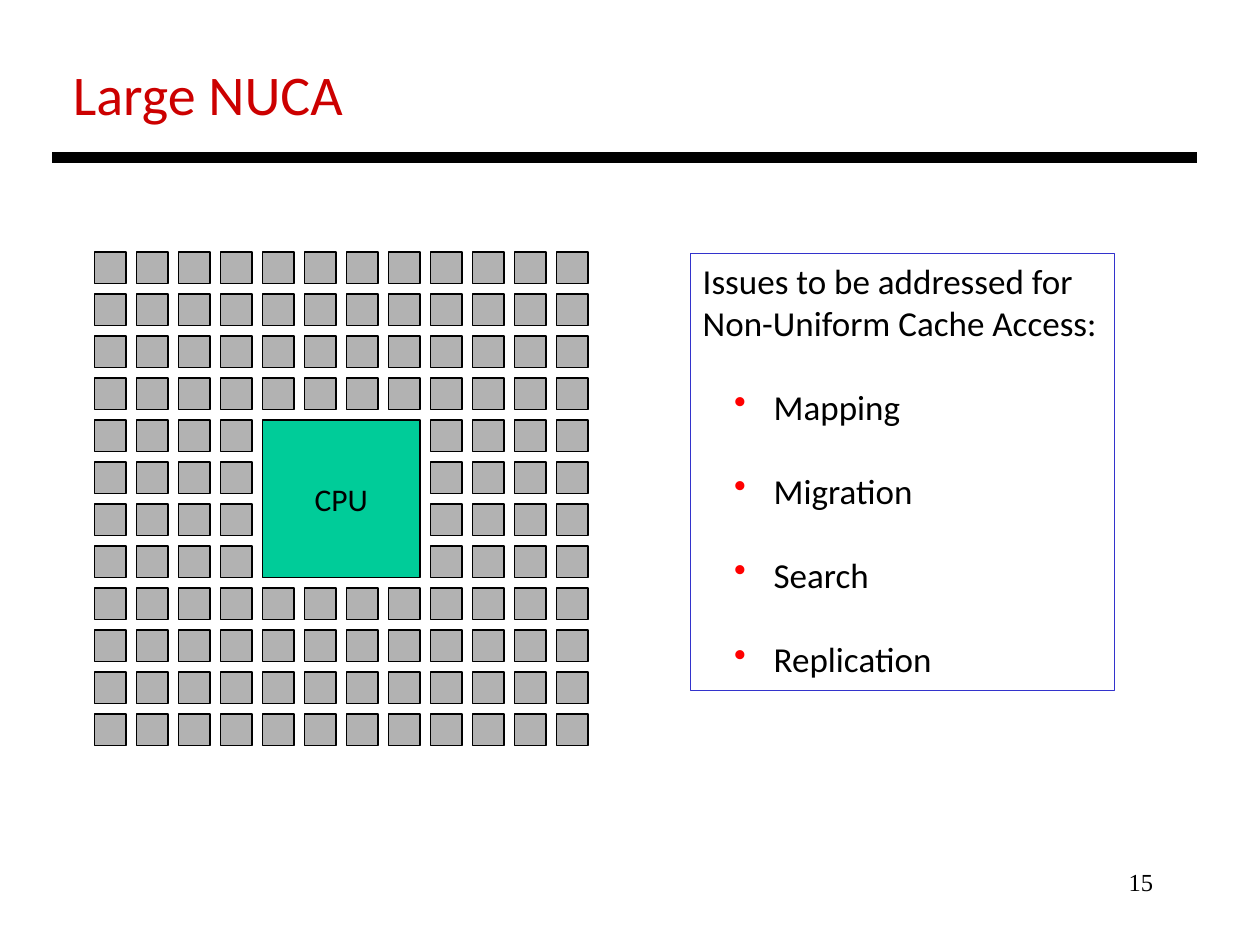
"""Builds the Large NUCA slide: a grid of cache banks around a CPU, beside a list of issues."""
from dataclasses import dataclass
from itertools import product

from lxml.etree import SubElement
from pptx import Presentation
from pptx.dml.color import RGBColor
from pptx.enum.shapes import MSO_CONNECTOR as Connector, MSO_SHAPE as Preset
from pptx.enum.text import MSO_ANCHOR as Anchor, MSO_AUTO_SIZE as AutoSize, PP_ALIGN as Align
from pptx.oxml.ns import qn
from pptx.util import Emu, Pt

EMU_PER_PX = 9525
COLORS = {
    "text": "000000",
    "title": "CC0000",
    "bank": "B2B2B2",
    "cpu": "00CC99",
    "panel": "3333CC",
    "bullet": "FF0000",
}
GRID_LEFT, GRID_TOP, GRID_COUNT = 72, 192, 12
BANK_SIZE, BANK_PITCH = 24, 32
CPU_FIRST, CPU_SPAN = 4, 4
HEADING = ("Issues to be addressed for", "Non-Uniform Cache Access:")
ISSUES = ("Mapping", "Migration", "Search", "Replication")


@dataclass(frozen=True)
class Area:
    left: int
    top: int
    width: int
    height: int

    def emu(self) -> tuple:
        return tuple(px(side) for side in (self.left, self.top, self.width, self.height))


@dataclass(frozen=True)
class Style:
    size: int
    color: str = "text"
    font: str = "Calibri"


def px(length: int) -> Emu:
    return Emu(length * EMU_PER_PX)


def rgb(name: str) -> RGBColor:
    return RGBColor.from_string(COLORS[name])


def add_run(para, text: str, style: Style) -> None:
    span = para.add_run()
    span.text = text
    span.font.size = Pt(style.size)
    span.font.name = style.font
    span.font.color.rgb = rgb(style.color)


def add_label(page, area: Area, text: str, style: Style, align=Align.LEFT, wrap: bool = True) -> None:
    box = page.shapes.add_textbox(*area.emu())
    box.text_frame.word_wrap = wrap
    para = box.text_frame.paragraphs[0]
    para.alignment = align
    add_run(para, text, style)


def add_rectangle(page, area: Area, fill: str = "", line: str = "text"):
    box = page.shapes.add_shape(Preset.RECTANGLE, *area.emu())
    box.shadow.inherit = False
    if fill:
        box.fill.solid()
        box.fill.fore_color.rgb = rgb(fill)
    else:
        box.fill.background()
    box.line.color.rgb = rgb(line)
    box.line.width = Pt(0.75)
    return box


def add_rule(page, left: int, right: int, top: int) -> None:
    rule = page.shapes.add_connector(Connector.STRAIGHT, px(left), px(top), px(right), px(top))
    rule.line.color.rgb = rgb("text")
    rule.line.width = Pt(6)
    SubElement(rule._element.spPr, qn("a:effectLst"))


def add_banks(page) -> None:
    core = range(CPU_FIRST, CPU_FIRST + CPU_SPAN)
    for row, column in product(range(GRID_COUNT), repeat=2):
        if row in core and column in core:
            continue
        left = GRID_LEFT + column * BANK_PITCH
        top = GRID_TOP + row * BANK_PITCH
        add_rectangle(page, Area(left, top, BANK_SIZE, BANK_SIZE), "bank")


def add_cpu(page) -> None:
    offset = CPU_FIRST * BANK_PITCH
    size = (CPU_SPAN - 1) * BANK_PITCH + BANK_SIZE
    box = add_rectangle(page, Area(GRID_LEFT + offset, GRID_TOP + offset, size, size), "cpu")
    frame = box.text_frame
    frame.word_wrap = False
    frame.vertical_anchor = Anchor.MIDDLE
    para = frame.paragraphs[0]
    para.alignment = Align.CENTER
    add_run(para, "CPU", Style(18))


def set_bullet(para) -> None:
    props = para._p.get_or_add_pPr()
    props.set("marL", str(px(48)))
    props.set("indent", str(px(-24)))
    color = SubElement(props, qn("a:buClr"))
    SubElement(color, qn("a:srgbClr"), val=COLORS["bullet"])
    SubElement(props, qn("a:buChar"), char="•")


def add_issues(page) -> None:
    box = add_rectangle(page, Area(526, 193, 323, 333), line="panel")
    frame = box.text_frame
    frame.word_wrap = False
    frame.auto_size = AutoSize.SHAPE_TO_FIT_TEXT
    frame.vertical_anchor = Anchor.TOP
    for index, text in enumerate(HEADING + ISSUES):
        para = frame.add_paragraph() if index else frame.paragraphs[0]
        para.alignment = Align.LEFT
        if text in ISSUES:
            para.level = 1
            para.space_before = Pt(24)
            set_bullet(para)
            text = f" {text}"
        add_run(para, text, Style(20))


def main() -> None:
    deck = Presentation()
    deck.slide_width, deck.slide_height = px(960), px(720)
    page = deck.slides.add_slide(deck.slide_layouts[6])
    add_label(page, Area(688, 656, 200, 48), "15", Style(14, font="Times New Roman"), Align.RIGHT)
    add_label(page, Area(46, 41, 228, 61), "Large NUCA", Style(32, "title"), wrap=False)
    add_rule(page, 40, 912, 120)
    add_banks(page)
    add_cpu(page)
    add_issues(page)
    deck.save("out.pptx")


if __name__ == "__main__":
    main()
